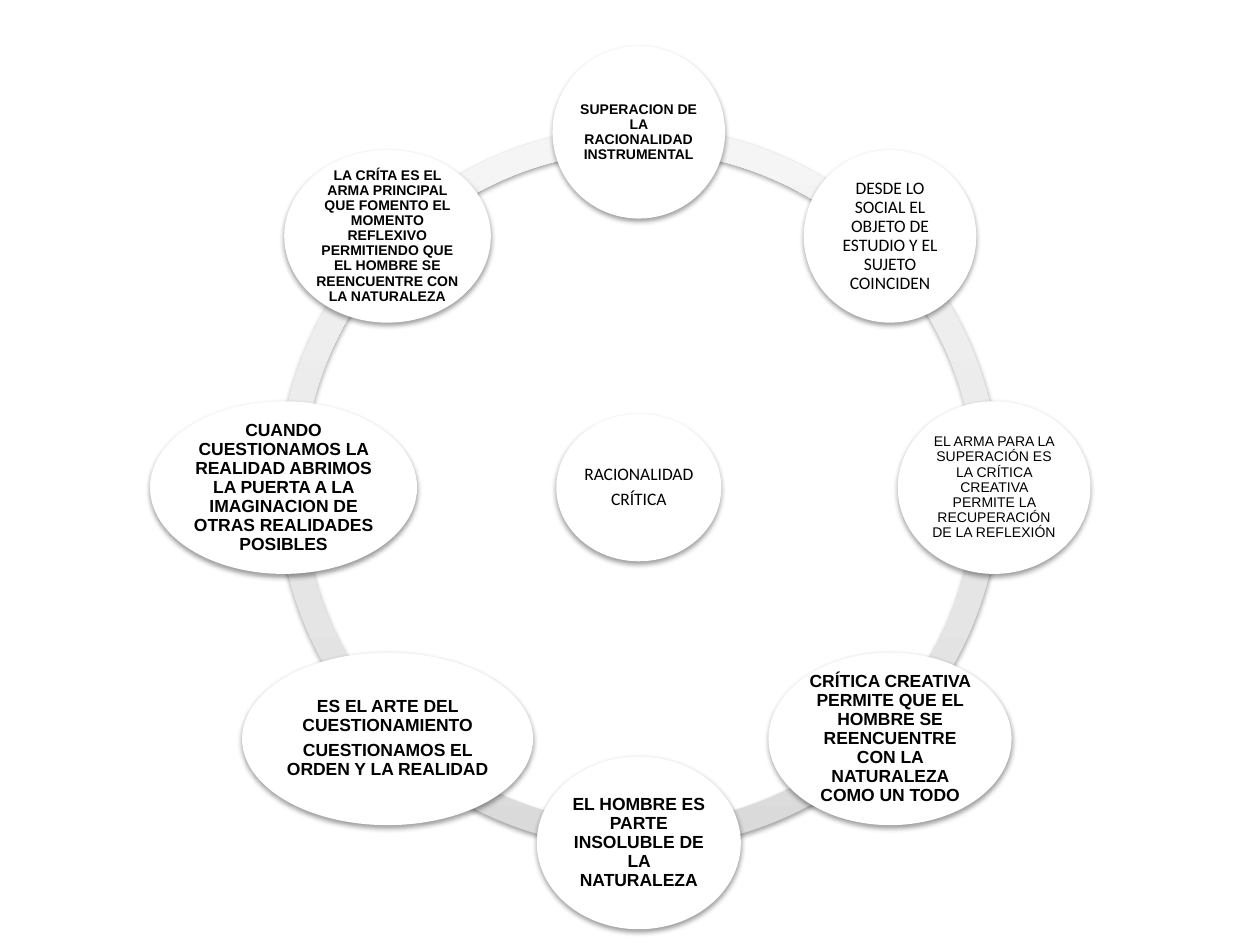
"""Build a radial diagram of eight ideas around critical rationality."""
from copy import deepcopy
from math import cos, radians, sin

from lxml.etree import SubElement
from pptx import Presentation
from pptx.dml.color import RGBColor
from pptx.enum.shapes import MSO_SHAPE
from pptx.enum.text import MSO_ANCHOR, PP_ALIGN
from pptx.oxml.ns import qn
from pptx.util import Inches, Pt

CENTER_X, CENTER_Y = 5.07, 3.87
RING_SIZE, RING_THICKNESS = 5.73, 0.034
ORBIT_RADIUS = 2.82
NODE_HEIGHT = 1.37
RING_STOPS = [(0, "DADADA"), (0.35, "E5E5E5"), (1, "F5F5F5")]

CORE = (["RACIONALIDAD", "CRÍTICA"], 1.31, 1.17, "Calibri", 10, False)
NODES = [
    (["SUPERACION DE LA RACIONALIDAD INSTRUMENTAL"], 1.37, "Arial", 8, True),
    (["DESDE LO SOCIAL EL OBJETO DE ESTUDIO Y EL SUJETO COINCIDEN"],
     1.37, "Calibri", 10, False),
    (["EL ARMA PARA LA SUPERACIÓN ES LA CRÍTICA CREATIVA PERMITE LA "
      "RECUPERACIÓN DE LA REFLEXIÓN"], 1.53, "Arial", 8, False),
    (["CRÍTICA CREATIVA PERMITE QUE EL HOMBRE SE REENCUENTRE CON LA "
      "NATURALEZA COMO UN TODO"], 1.93, "Arial", 10, True),
    (["EL HOMBRE ES PARTE INSOLUBLE DE LA NATURALEZA"],
     1.62, "Arial", 10, True),
    (["ES EL ARTE DEL CUESTIONAMIENTO",
      "CUESTIONAMOS EL ORDEN Y LA REALIDAD"], 2.31, "Arial", 10, True),
    (["CUANDO CUESTIONAMOS LA REALIDAD ABRIMOS LA PUERTA A LA IMAGINACION "
      "DE OTRAS REALIDADES POSIBLES"], 2.12, "Arial", 10, True),
    (["LA CRÍTA ES EL ARMA PRINCIPAL QUE FOMENTO EL MOMENTO REFLEXIVO "
      "PERMITIENDO QUE EL HOMBRE SE REENCUENTRE CON LA NATURALEZA"],
     1.64, "Arial", 8, True),
]


def color(value):
    return RGBColor.from_string(value)


def add_centered(slide, kind, x, y, width, height):
    shape = slide.shapes.add_shape(
        kind, Inches(x - width / 2), Inches(y - height / 2),
        Inches(width), Inches(height))
    shape.line.fill.background()
    shape.shadow.inherit = False
    effects = shape._element.spPr.find(qn("a:effectLst"))
    shadow = SubElement(
        effects, qn("a:outerShdw"), blurRad=str(Pt(3.1)), dist=str(Pt(1.6)),
        dir="5400000", rotWithShape="0")
    black = SubElement(shadow, qn("a:srgbClr"), val="000000")
    SubElement(black, qn("a:alpha"), val="38000")
    return shape


def add_arc(slide, start, end):
    shape = add_centered(
        slide, MSO_SHAPE.BLOCK_ARC, CENTER_X, CENTER_Y, RING_SIZE, RING_SIZE)
    for index, value in enumerate((start * 0.6, end * 0.6, RING_THICKNESS)):
        shape.adjustments[index] = value
    shape.fill.gradient()
    shape.fill.gradient_angle = 90
    stop_list = shape._element.spPr.find(".//" + qn("a:gsLst"))
    stop_list.append(deepcopy(stop_list[0]))
    for stop, (position, value) in zip(shape.fill.gradient_stops, RING_STOPS):
        stop.position = position
        stop.color.rgb = color(value)


def add_node(slide, x, y, lines, width, height, font, size, bold):
    shape = add_centered(slide, MSO_SHAPE.OVAL, x, y, width, height)
    shape.fill.solid()
    shape.fill.fore_color.rgb = color("FFFFFF")
    frame = shape.text_frame
    frame.text = "\n".join(lines)
    frame.word_wrap = True
    frame.vertical_anchor = MSO_ANCHOR.MIDDLE
    frame.margin_left = frame.margin_right = Inches(0.01)
    frame.margin_top = frame.margin_bottom = Inches(0.01)
    for paragraph in frame.paragraphs:
        paragraph.alignment = PP_ALIGN.CENTER
        paragraph.line_spacing = 0.9
        paragraph.space_after = Pt(size * 0.35)
        for run in paragraph.runs:
            run.font.name = font
            run.font.size = Pt(size)
            run.font.bold = bold
            run.font.color.rgb = color("000000")


def main():
    presentation = Presentation()
    presentation.slide_width = Inches(10)
    presentation.slide_height = Inches(7.5)
    slide = presentation.slides.add_slide(presentation.slide_layouts[6])
    step = 360 / len(NODES)
    for index in range(len(NODES)):
        start = (225 - index * step) % 360
        add_arc(slide, start, (start + step) % 360)
    add_node(slide, CENTER_X, CENTER_Y, *CORE)
    for index, (lines, width, font, size, bold) in enumerate(NODES):
        angle = radians(index * step - 90)
        add_node(slide, CENTER_X + ORBIT_RADIUS * cos(angle),
                 CENTER_Y + ORBIT_RADIUS * sin(angle),
                 lines, width, NODE_HEIGHT, font, size, bold)
    presentation.save("out.pptx")


if __name__ == "__main__":
    main()
